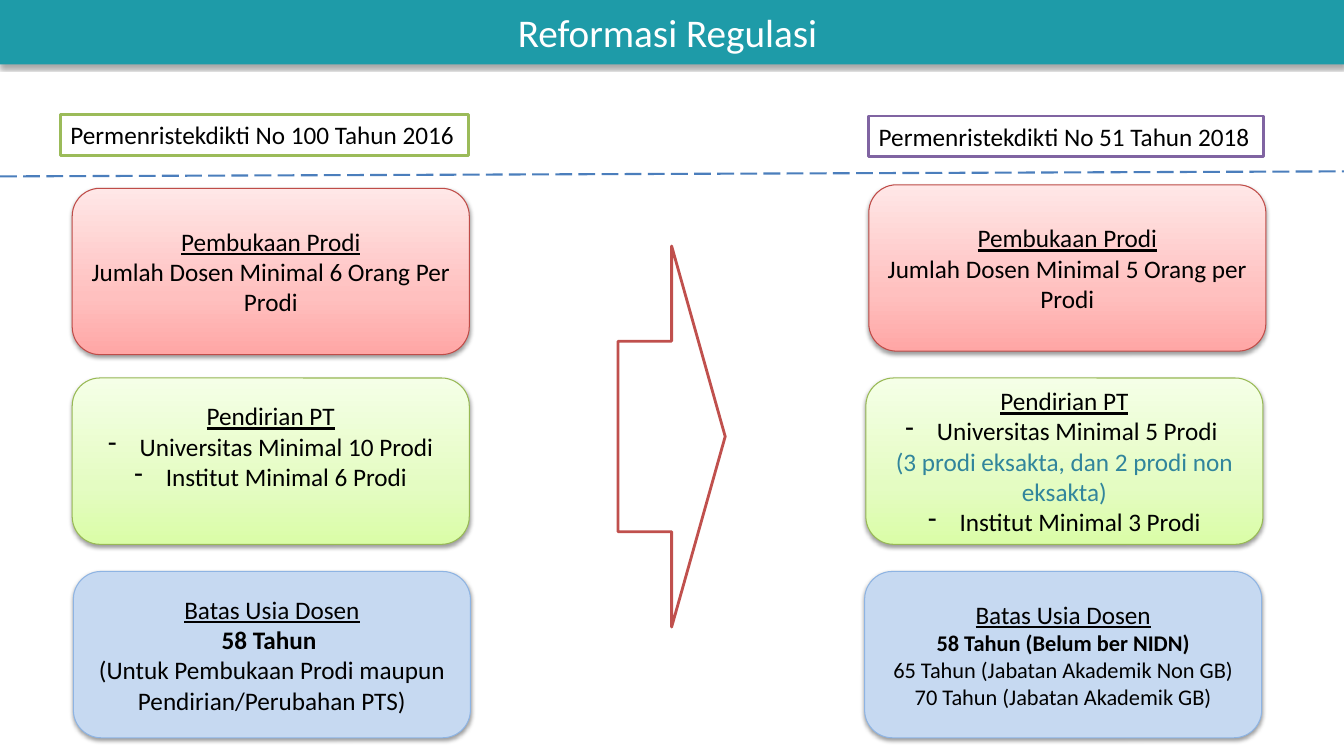
from copy import deepcopy

from lxml import etree
from pptx import Presentation
from pptx.dml.color import RGBColor
from pptx.enum.dml import MSO_LINE
from pptx.enum.shapes import MSO_CONNECTOR, MSO_SHAPE
from pptx.enum.text import MSO_ANCHOR, PP_ALIGN
from pptx.oxml.ns import qn
from pptx.util import Pt

ROUNDED = MSO_SHAPE.ROUNDED_RECTANGLE
RIGHT_ARROW = MSO_SHAPE.RIGHT_ARROW
STRAIGHT = MSO_CONNECTOR.STRAIGHT
LONG_DASH = MSO_LINE.LONG_DASH
MIDDLE = MSO_ANCHOR.MIDDLE
CENTER, LEFT = PP_ALIGN.CENTER, PP_ALIGN.LEFT

FONT = "Calibri"
COLORS = {
    "black": "000000", "white": "FFFFFF", "teal": "1E9BA8", "note": "31859C",
    "purple": "8064A2", "green": "9BBB59", "red": "C0504D", "divider": "4B7EBC",
}
# Each card style: fill colours from bottom to top, then the outline
CARD_STYLES = {
    "red": (["FFA6A5", "FFC0BF", "FFE7E7"], "BF4C48"),
    "green": (["DAFDA7", "E4FCC2", "F5FFE7"], "98B955"),
    "blue": (["C6D9F1"], "8EB4E3"),
}
GRADIENT_POSITIONS = (0, 0.35, 1)
WIDTH, HEIGHT = 960, 540
CARD_WIDTH, CARD_HEIGHT = 283.6, 118.8
BULLET_INDENT = 22.5

# Each card: style, left, top, bottom inset, heading, lines of (text, options)
CARDS = [
    ("red", 51.6, 134.5, 3.6, "Pembukaan Prodi",
     [("Jumlah Dosen Minimal 6 Orang Per Prodi", {})]),
    ("red", 620.6, 132, 3.6, "Pembukaan Prodi",
     [("Jumlah Dosen Minimal 5 Orang per Prodi", {})]),
    ("green", 51.6, 270, 25.2, "Pendirian PT",
     [("Universitas Minimal 10 Prodi", {"bullet": True}),
      ("Institut Minimal 6 Prodi", {"bullet": True})]),
    ("green", 618.5, 270, 3.6, "Pendirian PT",
     [("Universitas Minimal 5 Prodi ", {"bullet": True}),
      ("(3 prodi eksakta, dan 2 prodi non eksakta)", {"color": "note"}),
      ("Institut Minimal 3 Prodi", {"bullet": True})]),
    ("blue", 52.4, 408.2, 3.6, "Batas Usia Dosen",
     [("58 Tahun ", {"bold": True}),
      ("(Untuk Pembukaan Prodi maupun Pendirian/Perubahan PTS)", {})]),
    ("blue", 617.6, 408.2, 3.6, "Batas Usia Dosen",
     [("58 Tahun (Belum ber NIDN)", {"size": 16, "bold": True}),
      ("65 Tahun (Jabatan Akademik Non GB)", {"size": 16}),
      ("70 Tahun (Jabatan Akademik GB)", {"size": 16})]),
]


def rgb(value):
    return RGBColor.from_string(value)


def box(left, top, width, height):
    return Pt(left), Pt(top), Pt(width), Pt(height)


def fill_solid(shape, value):
    shape.fill.solid()
    shape.fill.fore_color.rgb = rgb(value)


def fill_gradient(shape, values):
    """Blend three colours upwards."""
    shape.fill.gradient()
    shape.fill.gradient_angle = 90
    stops = shape._element.spPr.find(qn("a:gradFill")).find(qn("a:gsLst"))
    stops.insert(1, deepcopy(stops[0]))
    for stop, position, value in zip(shape.fill.gradient_stops, GRADIENT_POSITIONS, values):
        stop.position = position
        stop.color.rgb = rgb(value)


def set_line(shape, value, width):
    shape.line.color.rgb = rgb(value)
    shape.line.width = Pt(width)


def add_shadow(shape, opacity):
    """Drop a soft shadow straight down."""
    shape.shadow.inherit = False
    effects = shape._element.spPr.find(qn("a:effectLst"))
    shadow = etree.SubElement(effects, qn("a:outerShdw"), blurRad=str(Pt(3.1)),
                              dist=str(Pt(1.7)), dir="5400000", rotWithShape="0")
    color = etree.SubElement(shadow, qn("a:srgbClr"), val=COLORS["black"])
    etree.SubElement(color, qn("a:alpha"), val=str(opacity * 1000))


def write(paragraph, text, size=18, color="black", bold=False, underline=False,
          bullet=False, align=CENTER):
    paragraph.text = text
    paragraph.alignment = align
    if bullet:
        properties = paragraph._p.get_or_add_pPr()
        properties.set("marL", str(Pt(BULLET_INDENT)))
        properties.set("indent", str(-Pt(BULLET_INDENT)))
        etree.SubElement(properties, qn("a:buFontTx"))
        etree.SubElement(properties, qn("a:buChar"), char="-")
    font = paragraph.font
    font.name, font.size = FONT, Pt(size)
    font.bold, font.underline = bold, underline
    font.color.rgb = rgb(COLORS[color])


def add_title(slide, text, left, top, width, height):
    title = slide.shapes.title
    title.left, title.top, title.width, title.height = box(left, top, width, height)
    fill_solid(title, COLORS["teal"])
    add_shadow(title, 35)
    title.text_frame.vertical_anchor = MIDDLE
    write(title.text_frame.paragraphs[0], text, size=28, color="white")


def add_regulation(slide, text, color, left, top, width, height):
    label = slide.shapes.add_textbox(*box(left, top, width, height))
    fill_solid(label, COLORS["white"])
    set_line(label, COLORS[color], 2)
    label.text_frame.word_wrap = False
    write(label.text_frame.paragraphs[0], text, align=LEFT)


def add_card(slide, style, left, top, bottom_inset, heading, lines):
    card = slide.shapes.add_shape(ROUNDED, *box(left, top, CARD_WIDTH, CARD_HEIGHT))
    fills, outline = CARD_STYLES[style]
    if len(fills) > 1:
        fill_gradient(card, fills)
    else:
        fill_solid(card, fills[0])
    set_line(card, outline, 0.75)
    add_shadow(card, 38)
    frame = card.text_frame
    frame.word_wrap = True
    frame.vertical_anchor = MIDDLE
    frame.margin_bottom = Pt(bottom_inset)
    write(frame.paragraphs[0], heading, underline=True)
    for text, options in lines:
        write(frame.add_paragraph(), text, **options)


def add_change_arrow(slide, left, top, width, height):
    arrow = slide.shapes.add_shape(RIGHT_ARROW, *box(left, top, width, height))
    fill_solid(arrow, COLORS["white"])
    set_line(arrow, COLORS["red"], 2)
    arrow.shadow.inherit = False


def add_divider(slide, left, start, right, end):
    divider = slide.shapes.add_connector(STRAIGHT, Pt(left), Pt(start), Pt(right), Pt(end))
    set_line(divider, COLORS["divider"], 1.5)
    divider.line.dash_style = LONG_DASH
    etree.SubElement(divider._element.spPr, qn("a:effectLst"))


def build_reform_slide(presentation):
    slide = presentation.slides.add_slide(presentation.slide_layouts[5])
    add_title(slide, "Reformasi Regulasi ", 0, 0, WIDTH, 46)
    add_regulation(slide, "Permenristekdikti No 100 Tahun 2016", "green", 43.2, 82, 291.6, 29)
    add_regulation(slide, "Permenristekdikti No 51 Tahun 2018", "purple", 620.6, 82.8, 282.2, 29)
    for card in CARDS:
        add_card(slide, *card)
    add_change_arrow(slide, 441.5, 175.7, 76.5, 272.2)
    add_divider(slide, 0, 126, WIDTH, 122.4)


def main():
    presentation = Presentation()
    presentation.slide_width, presentation.slide_height = Pt(WIDTH), Pt(HEIGHT)
    build_reform_slide(presentation)
    presentation.save("out.pptx")


if __name__ == "__main__":
    main()
